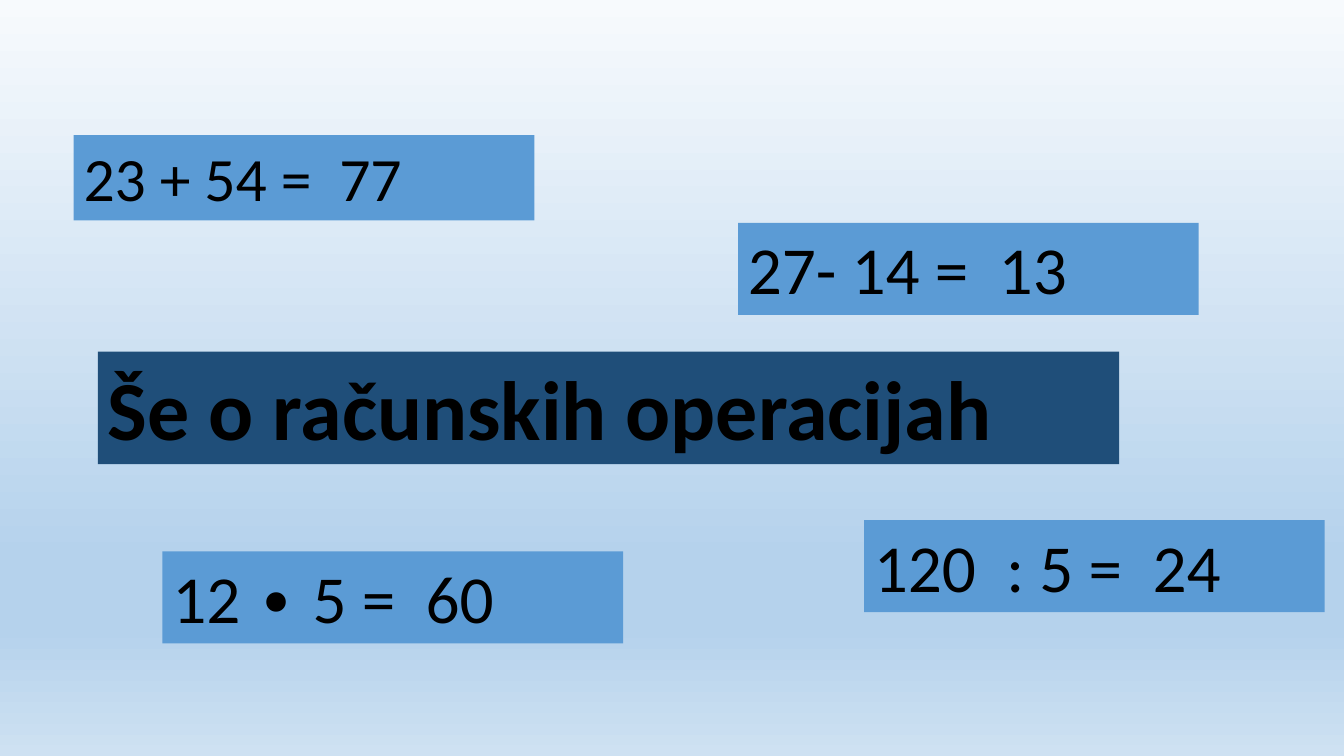
from dataclasses import dataclass

from lxml.etree import SubElement
from pptx import Presentation
from pptx.dml.color import RGBColor
from pptx.enum.shapes import MSO_SHAPE
from pptx.enum.text import MSO_ANCHOR, MSO_AUTO_SIZE, PP_ALIGN
from pptx.oxml.ns import qn
from pptx.slide import Slide
from pptx.util import Inches, Pt

SLIDE_WIDTH = Inches(13.33)
SLIDE_HEIGHT = Inches(7.5)
FONT = "Calibri"
LINE_SPACING = 1.22
VERTICAL_MARGINS = Inches(0.1)
EQUATION_WIDTH = 34.28
GRADIENT_STOPS = [(0, "F7FAFD"), (74, "B5D2EC"), (83, "B5D2EC"), (100, "CEE1F2")]


@dataclass(frozen=True)
class Label:
    """A one-line box; left, top and width are percentages of the slide's size."""
    text: str
    left: float
    top: float
    size: int
    width: float = EQUATION_WIDTH
    fill: str = "5B9BD5"
    bold: bool = False


LABELS = [
    Label("Še o računskih operacijah", 7.28, 46.53, 60, 76, "1F4E79", True),
    Label("23 + 54 =  77", 5.48, 17.87, 44),
    Label("27- 14 =  13", 54.91, 29.47, 48),
    Label("12 ∙ 5 =  60", 12.08, 72.93, 48),
    Label("120  : 5 =  24", 64.29, 68.8, 48),
]


def color(value: str) -> RGBColor:
    return RGBColor.from_string(value)


def across(percent: float) -> int:
    return round(SLIDE_WIDTH * percent / 100)


def down(percent: float) -> int:
    return round(SLIDE_HEIGHT * percent / 100)


def paint_background(slide: Slide) -> None:
    fill = slide.background.fill
    fill.gradient()
    fill.gradient_angle = 270
    stop_list = next(slide.element.iter(qn("a:gsLst")))
    for old_stop in list(stop_list):
        stop_list.remove(old_stop)
    for percent, value in GRADIENT_STOPS:
        stop = SubElement(stop_list, qn("a:gs"), pos=str(percent * 1000))
        SubElement(stop, qn("a:srgbClr"), val=value)


def add_label(slide: Slide, label: Label) -> None:
    height = round(Pt(label.size) * LINE_SPACING) + VERTICAL_MARGINS
    shape = slide.shapes.add_shape(
        MSO_SHAPE.RECTANGLE,
        across(label.left), down(label.top), across(label.width), height,
    )
    shape.shadow.inherit = False
    shape.fill.solid()
    shape.fill.fore_color.rgb = color(label.fill)
    shape.line.fill.background()

    frame = shape.text_frame
    frame.word_wrap = True
    frame.auto_size = MSO_AUTO_SIZE.SHAPE_TO_FIT_TEXT
    frame.vertical_anchor = MSO_ANCHOR.TOP
    paragraph = frame.paragraphs[0]
    paragraph.alignment = PP_ALIGN.LEFT
    run = paragraph.add_run()
    run.text = label.text
    run.font.name = FONT
    run.font.size = Pt(label.size)
    run.font.bold = label.bold
    run.font.color.rgb = color("000000")


def main() -> None:
    presentation = Presentation()
    presentation.slide_width = SLIDE_WIDTH
    presentation.slide_height = SLIDE_HEIGHT
    slide = presentation.slides.add_slide(presentation.slide_layouts[6])
    paint_background(slide)
    for label in LABELS:
        add_label(slide, label)
    presentation.save("out.pptx")


if __name__ == "__main__":
    main()
